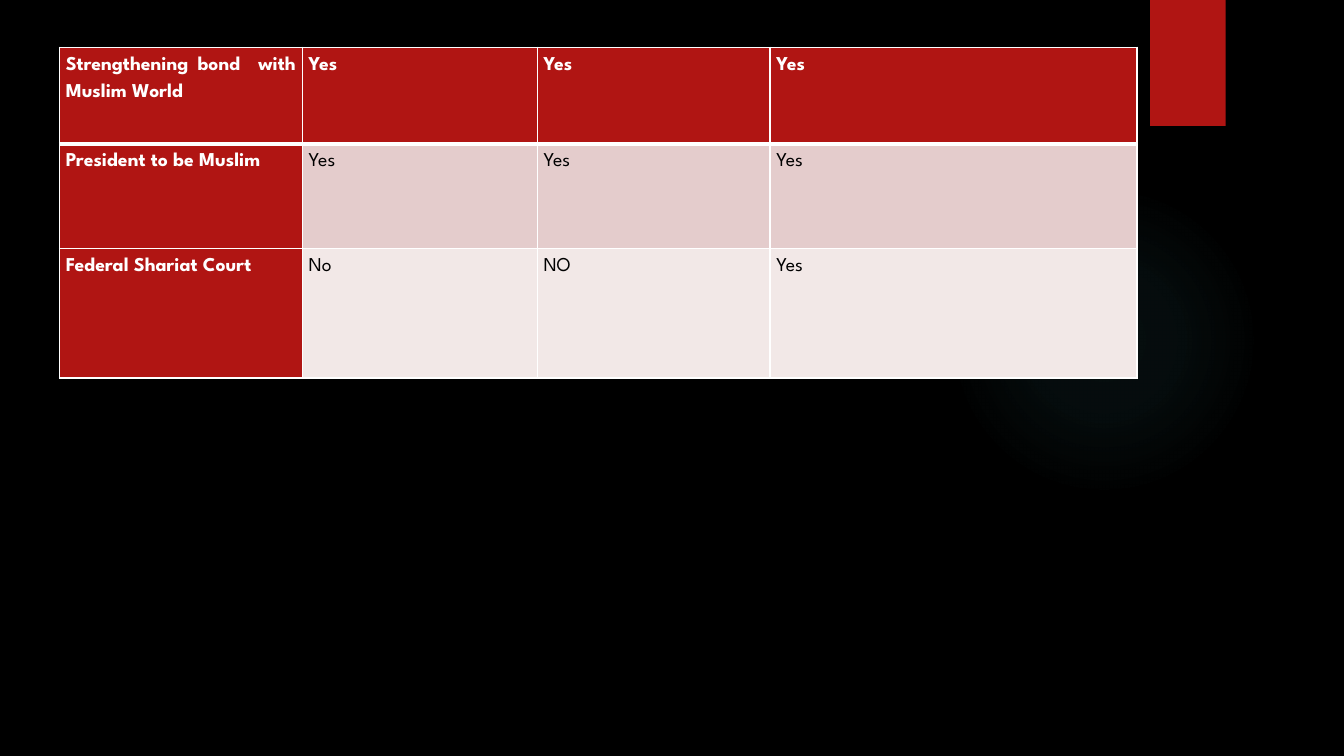
import pptx
import pptx.util
import pptx.oxml
import pptx.oxml.ns
import pptx.dml.color
import pptx.enum.shapes
import pptx.enum.text

Pt = pptx.util.Pt
SHAPE = pptx.enum.shapes.MSO_SHAPE
COLORS = {"black": "000000", "white": "FFFFFF", "red": "B01513",
          "pink": "E4CCCC", "pale": "F2E8E7", "teal": "50B9C1"}
COLS = [173.5, 167.8, 166.3, 262.1]
ROWS = [69.1, 74.9, 92.2]
PROVISIONS = [
    ["Strengthening bond  with Muslim World", "Yes", "Yes", "Yes"],
    ["President to be Muslim", "Yes", "Yes", "Yes"],
    ["Federal Shariat Court", "No", "NO", "Yes"],
]
ROW_FILLS = ["red", "pink", "pale"]
CELL_FORMAT = {"margin_left": Pt(4.5), "margin_right": Pt(4.5),
               "margin_top": 0, "margin_bottom": 0}
PARAGRAPH_FORMAT = {"alignment": pptx.enum.text.PP_ALIGN.JUSTIFY,
                    "line_spacing": 1.5}
FONT_FORMAT = {"name": "League Spartan", "size": Pt(14)}


def apply(obj, values):
    for name, value in values.items():
        setattr(obj, name, value)


def rgb(color):
    return pptx.dml.color.RGBColor.from_string(COLORS[color])


def paint(fill, color):
    fill.solid()
    fill.fore_color.rgb = rgb(color)


def parse_xml(text):
    ns = pptx.oxml.ns.nsdecls("a")
    return pptx.oxml.parse_xml(text.replace(" ", f" {ns} ", 1))


def alpha_color(color, percent):
    return (f'<a:srgbClr val="{COLORS[color]}">'
            f'<a:alpha val="{percent * 1000}"/></a:srgbClr>')


def add_plain_shape(s, kind, left, top, width, height):
    sp = s.shapes.add_shape(kind, Pt(left), Pt(top), Pt(width), Pt(height))
    sp.shadow.inherit = False
    sp.line.fill.background()
    return sp


def add_glow(s, left, top, size):
    sp = add_plain_shape(s, SHAPE.OVAL, left, top, size, size)
    stops = "".join(f'<a:gs pos="{pos * 1000}">{alpha_color("teal", alpha)}</a:gs>'
                    for pos, alpha in [(0, 7), (36, 6), (69, 0)])
    grad = parse_xml(
        f'<a:gradFill rotWithShape="1"><a:gsLst>{stops}</a:gsLst>'
        '<a:path path="circle"><a:fillToRect l="50000" t="50000" '
        'r="50000" b="50000"/></a:path></a:gradFill>')
    sp._element.spPr.find(pptx.oxml.ns.qn("a:prstGeom")).addnext(grad)


def add_tab(s, left, top, width, height):
    sp = add_plain_shape(s, SHAPE.RECTANGLE, left, top, width, height)
    paint(sp.fill, "red")
    effects = sp._element.spPr.find(pptx.oxml.ns.qn("a:effectLst"))
    effects.append(parse_xml(
        f'<a:outerShdw blurRad="{Pt(3)}" dist="{Pt(2)}" dir="5400000">'
        f'{alpha_color("black", 45)}</a:outerShdw>'))


def set_borders(cell, top, bottom):
    tcPr = cell._tc.get_or_add_tcPr()
    for side, width in zip("LRTB", (1, 1, top, bottom)):
        tcPr.append(parse_xml(
            f'<a:ln{side} w="{Pt(width)}"><a:solidFill>'
            f'<a:srgbClr val="{COLORS["white"]}"/></a:solidFill></a:ln{side}>'))


def fill_cell(cell, text, row, is_label):
    strong = row == 0 or is_label
    apply(cell, CELL_FORMAT)
    set_borders(cell, 3 if row == 1 else 1, 3 if row == 0 else 1)
    paint(cell.fill, "red" if strong else ROW_FILLS[row])
    p = cell.text_frame.paragraphs[0]
    apply(p, PARAGRAPH_FORMAT)
    r = p.add_run()
    r.text = text
    apply(r.font, {**FONT_FORMAT, "bold": strong})
    r.font.color.rgb = rgb("white" if strong else "black")


def add_provisions_table(s, left, top):
    table = s.shapes.add_table(len(ROWS), len(COLS), Pt(left), Pt(top),
                               Pt(sum(COLS)), Pt(sum(ROWS))).table
    apply(table, {"first_row": True, "first_col": True, "horz_banding": False})
    for column, width in zip(table.columns, COLS):
        column.width = Pt(width)
    for i, (height, texts) in enumerate(zip(ROWS, PROVISIONS)):
        table.rows[i].height = Pt(height)
        for j, text in enumerate(texts):
            fill_cell(table.cell(i, j), text, i, j == 0)


def main():
    prs = pptx.Presentation()
    apply(prs, {"slide_width": Pt(960), "slide_height": Pt(540)})
    s = prs.slides.add_slide(prs.slide_layouts[6])
    paint(s.background.fill, "black")
    add_glow(s, 677.5, 131.8, 221.8)
    add_tab(s, 821.5, 0, 54, 90)
    add_provisions_table(s, 42.5, 33.8)
    prs.save("out.pptx")


if __name__ == "__main__":
    main()
